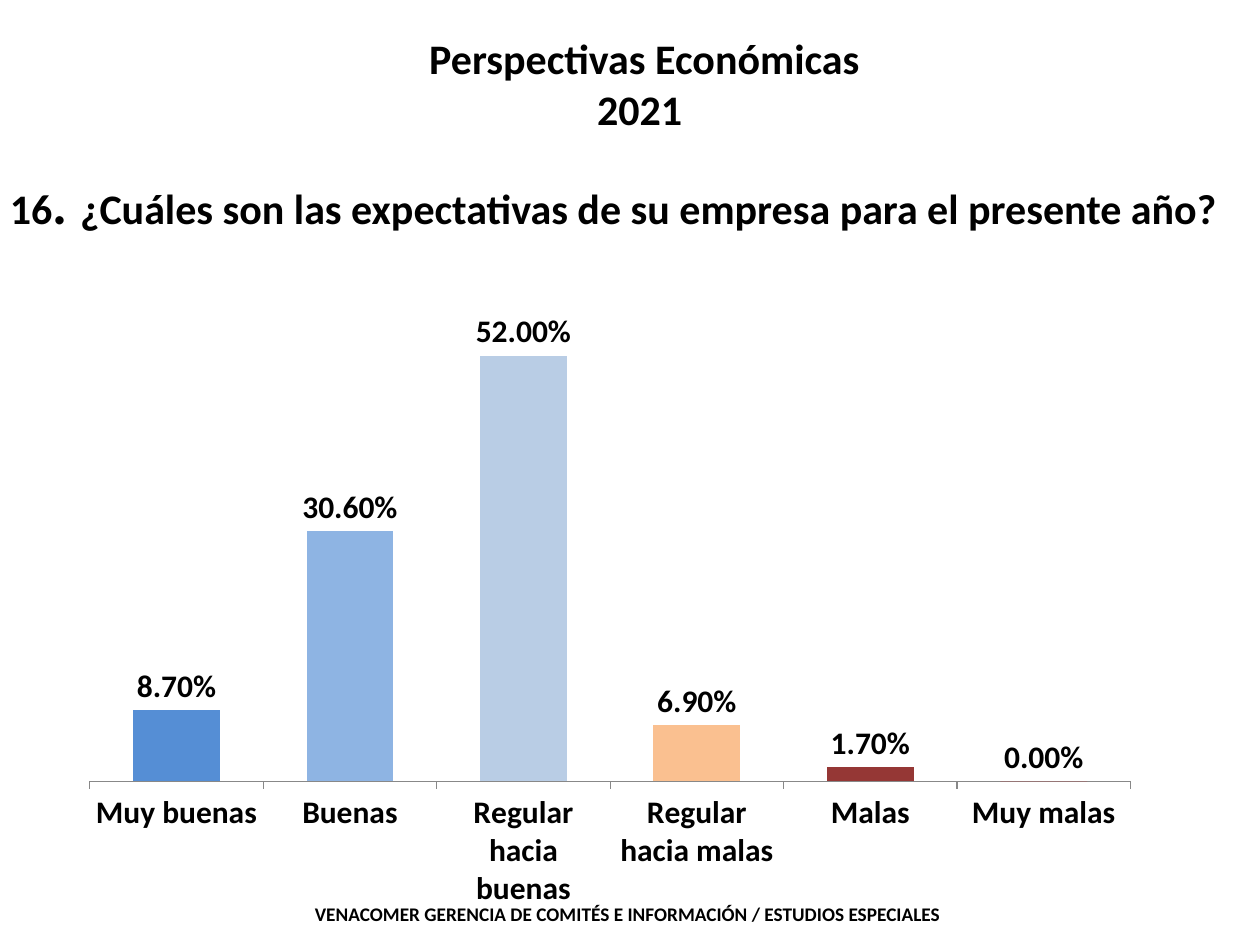
"""Build the 2021 economic outlook slide with a column chart of company expectations."""
from lxml import etree
from pptx import Presentation
from pptx.chart.data import CategoryChartData
from pptx.dml.color import RGBColor
from pptx.enum.chart import XL_CHART_TYPE, XL_LABEL_POSITION, XL_TICK_MARK
from pptx.enum.text import MSO_ANCHOR, MSO_AUTO_SIZE, PP_ALIGN
from pptx.oxml.ns import qn
from pptx.util import Inches, Pt

COLUMN = XL_CHART_TYPE.COLUMN_CLUSTERED
OUTSIDE_END = XL_LABEL_POSITION.OUTSIDE_END
TICK_OUT, TICK_NONE = XL_TICK_MARK.OUTSIDE, XL_TICK_MARK.NONE
TOP, CENTER = MSO_ANCHOR.TOP, PP_ALIGN.CENTER
NO_FIT = MSO_AUTO_SIZE.NONE

COLORS = {"text": "000000", "axis": "888888", "series": "9999FF"}
ANSWERS = [
    ("Muy buenas", 0.087, "558ED5"),
    ("Buenas", 0.306, "8EB4E3"),
    ("Regular hacia buenas", 0.52, "B9CDE5"),
    ("Regular hacia malas", 0.069, "FAC090"),
    ("Malas", 0.017, "953735"),
    ("Muy malas", 0, "FF0000"),
]
PLOT_LAYOUT = [
    ("layoutTarget", "inner"), ("xMode", "edge"), ("yMode", "edge"),
    ("x", "0.06"), ("y", "0.125"), ("w", "0.836"), ("h", "0.702"),
]


def style_font(font, size):
    font.name = "Calibri"
    font.size = Pt(size)
    font.bold = True
    font.color.rgb = RGBColor.from_string(COLORS["text"])


prs = Presentation()
prs.slide_width, prs.slide_height = Inches(10), Inches(7.5)
s = prs.slides.add_slide(prs.slide_layouts[5])

title = s.shapes.title
title.left, title.top = Inches(2.4), Inches(0.21)
title.width, title.height = Inches(5.43), Inches(0.91)
tf = title.text_frame
tf.text = "Perspectivas Económicas\n2021 "
tf.auto_size = NO_FIT
tf.vertical_anchor = TOP
for p in tf.paragraphs:
    p.alignment = CENTER
    style_font(p.runs[0].font, 24)

footer = s.shapes.add_textbox(Inches(2.4), Inches(7.11), Inches(5.51), Inches(0.27))
tf = footer.text_frame
tf.word_wrap = True
tf.text = "VENACOMER GERENCIA DE COMITÉS E INFORMACIÓN / ESTUDIOS ESPECIALES"
style_font(tf.paragraphs[0].runs[0].font, 11)

question = s.shapes.add_textbox(Inches(-0.02), Inches(1.29), Inches(10.02), Inches(0.64))
tf = question.text_frame
tf.word_wrap = True
p = tf.paragraphs[0]
for text, size in [
    ("16", 24),
    (". ", 32),
    ("¿Cuáles son las expectativas de su empresa para el presente año?", 24),
]:
    r = p.add_run()
    r.text = text
    style_font(r.font, size)

data = CategoryChartData(number_format="0.00%")
data.categories = [name for name, _, _ in ANSWERS]
data.add_series("Series 1", [value for _, value, _ in ANSWERS])
chart = s.shapes.add_chart(
    COLUMN, Inches(0.12), Inches(1.61), Inches(9.88), Inches(5.59), data
).chart
chart.has_title = False
chart.has_legend = False
chart.font.name = "Arial"
chart.font.size = Pt(11.8)
chart.font.color.rgb = RGBColor.from_string(COLORS["text"])

axis = chart.category_axis
axis.major_tick_mark = TICK_OUT
axis.minor_tick_mark = TICK_NONE
axis.format.line.color.rgb = RGBColor.from_string(COLORS["axis"])
axis.format.line.width = Pt(0.75)
style_font(axis.tick_labels.font, 18)

axis = chart.value_axis
axis.minimum_scale, axis.maximum_scale = 0, 0.6
axis.has_major_gridlines = False
axis.tick_labels.number_format = "0.00%"
axis.tick_labels.number_format_is_linked = False
axis.visible = False

plot = chart.plots[0]
plot.gap_width = 100
plot.vary_by_categories = False
series = plot.series[0]
series.format.fill.solid()
series.format.fill.fore_color.rgb = RGBColor.from_string(COLORS["series"])
for i, (_, _, color) in enumerate(ANSWERS):
    fill = series.points[i].format.fill
    fill.solid()
    fill.fore_color.rgb = RGBColor.from_string(color)

labels = series.data_labels
labels.show_value = True
labels.number_format = "0.00%"
labels.number_format_is_linked = False
labels.position = OUTSIDE_END
style_font(labels.font, 18)

plot_area = chart.element.find(".//" + qn("c:plotArea"))
for old in plot_area.findall(qn("c:layout")):
    plot_area.remove(old)
layout = etree.Element(qn("c:layout"))
manual = etree.SubElement(layout, qn("c:manualLayout"))
for tag, value in PLOT_LAYOUT:
    etree.SubElement(manual, qn(f"c:{tag}")).set("val", value)
plot_area.insert(0, layout)

prs.save("out.pptx")
